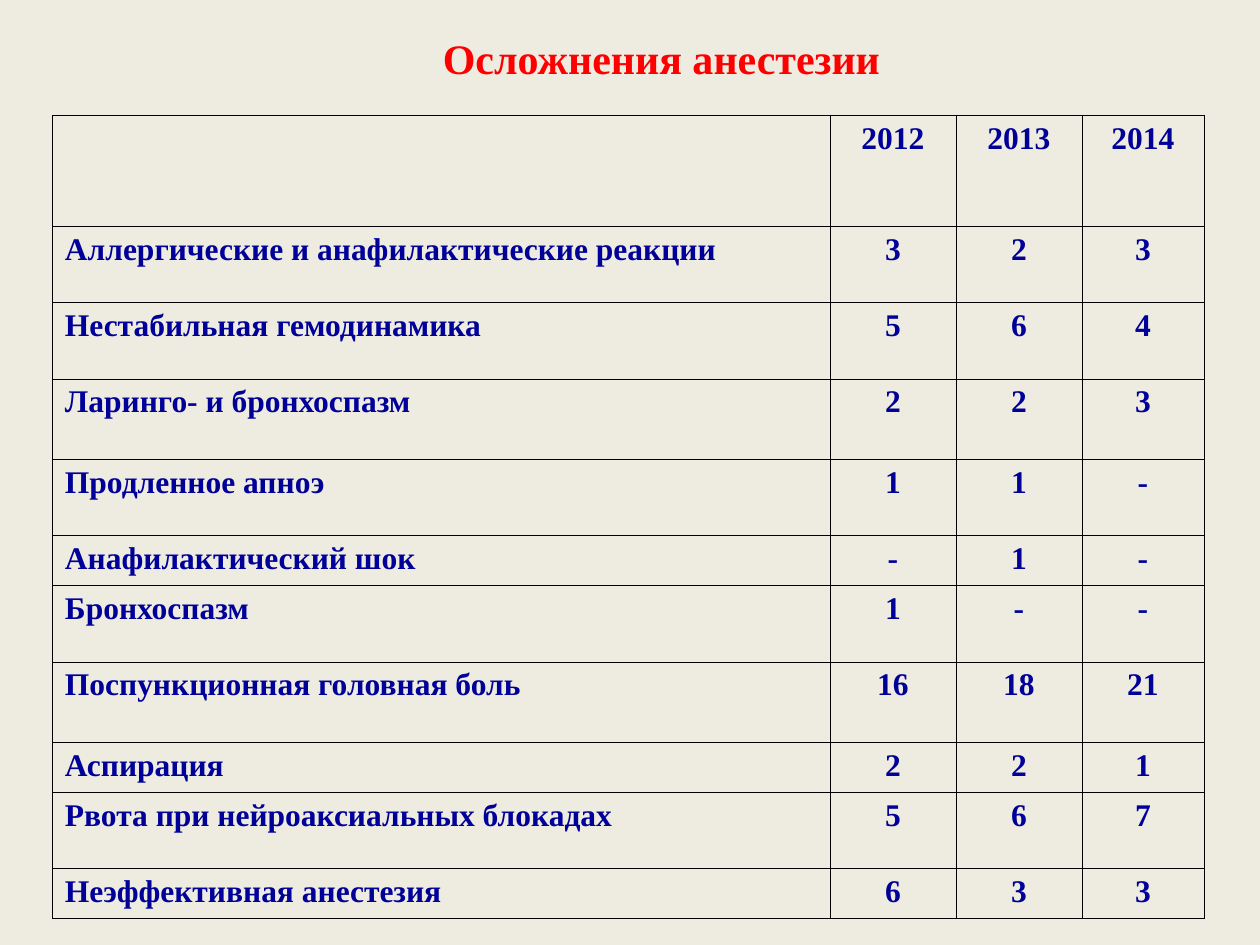
import pptx
import pptx.dml.color
import pptx.enum.text
import pptx.oxml.ns
import pptx.util
from lxml import etree
from pptx.util import Cm, Pt

ALIGN = pptx.enum.text.PP_ALIGN
ANCHOR = pptx.enum.text.MSO_ANCHOR


def rgb(value):
    return pptx.dml.color.RGBColor.from_string(value)


def add_bold_run(paragraph, text, size, color):
    run = paragraph.add_run()
    run.text = text
    run.font.name = "Times New Roman"
    run.font.size = Pt(size)
    run.font.bold = True
    run.font.color.rgb = rgb(color)


presentation = pptx.Presentation()
presentation.slide_width = Cm(25.4)
presentation.slide_height = Cm(19.05)
slide = presentation.slides.add_slide(presentation.slide_layouts[6])
slide.background.fill.solid()
slide.background.fill.fore_color.rgb = rgb("EEECE1")

heading = slide.shapes.add_textbox(Cm(2.54), Cm(0.43), Cm(21.59), Cm(1.47)).text_frame
heading.word_wrap = True
heading.vertical_anchor = ANCHOR.MIDDLE
heading.paragraphs[0].alignment = ALIGN.CENTER
add_bold_run(heading.paragraphs[0], "Осложнения анестезии", 24, "FF0000")

# Row height in cm, then the cell texts
HEADER, SHORT, NORMAL, TALL = 2.24, 0.94, 1.54, 1.62
complications = [
    (HEADER, "", "2012", "2013", "2014"),
    (NORMAL, "Аллергические и анафилактические реакции", "3", "2", "3"),
    (NORMAL, "Нестабильная гемодинамика", "5", "6", "4"),
    (TALL, "Ларинго- и бронхоспазм", "2", "2", "3"),
    (NORMAL, "Продленное апноэ", "1", "1", "-"),
    (SHORT, "Анафилактический шок", "-", "1", "-"),
    (NORMAL, "Бронхоспазм", "1", "-", "-"),
    (TALL, "Поспункционная головная боль", "16", "18", "21"),
    (SHORT, "Аспирация", "2", "2", "1"),
    (NORMAL, "Рвота при нейроаксиальных блокадах", "5", "6", "7"),
    (SHORT, "Неэффективная анестезия", "6", "3", "3"),
]
column_widths = [15.67, 2.54, 2.54, 2.46]

table = slide.shapes.add_table(
    len(complications), len(column_widths), Cm(1.06), Cm(2.32),
    Cm(sum(column_widths)), Cm(sum(row[0] for row in complications))).table
table.first_row = False
table.horz_banding = False
for column, width in zip(table.columns, column_widths):
    column.width = Cm(width)

for row, (height, *texts) in zip(table.rows, complications):
    row.height = Cm(height)
    for position, (cell, text) in enumerate(zip(row.cells, texts)):
        cell.margin_left = cell.margin_right = Cm(0.25)
        cell.margin_top, cell.margin_bottom = Cm(0.15), Cm(0.13)
        cell.vertical_anchor = ANCHOR.TOP
        paragraph = cell.text_frame.paragraphs[0]
        paragraph.alignment = ALIGN.CENTER if position else ALIGN.LEFT
        paragraph.line_spacing = 0.95
        if text:
            add_bold_run(paragraph, text, 18, "000099")

        # Borders must precede the fill in the cell properties
        properties = cell._tc.get_or_add_tcPr()
        for side in ("a:lnL", "a:lnR", "a:lnT", "a:lnB"):
            border = etree.SubElement(
                properties, pptx.oxml.ns.qn(side), w=str(Pt(0.45)))
            paint = etree.SubElement(border, pptx.oxml.ns.qn("a:solidFill"))
            etree.SubElement(paint, pptx.oxml.ns.qn("a:srgbClr"), val="000000")
        cell.fill.background()

presentation.save("out.pptx")
